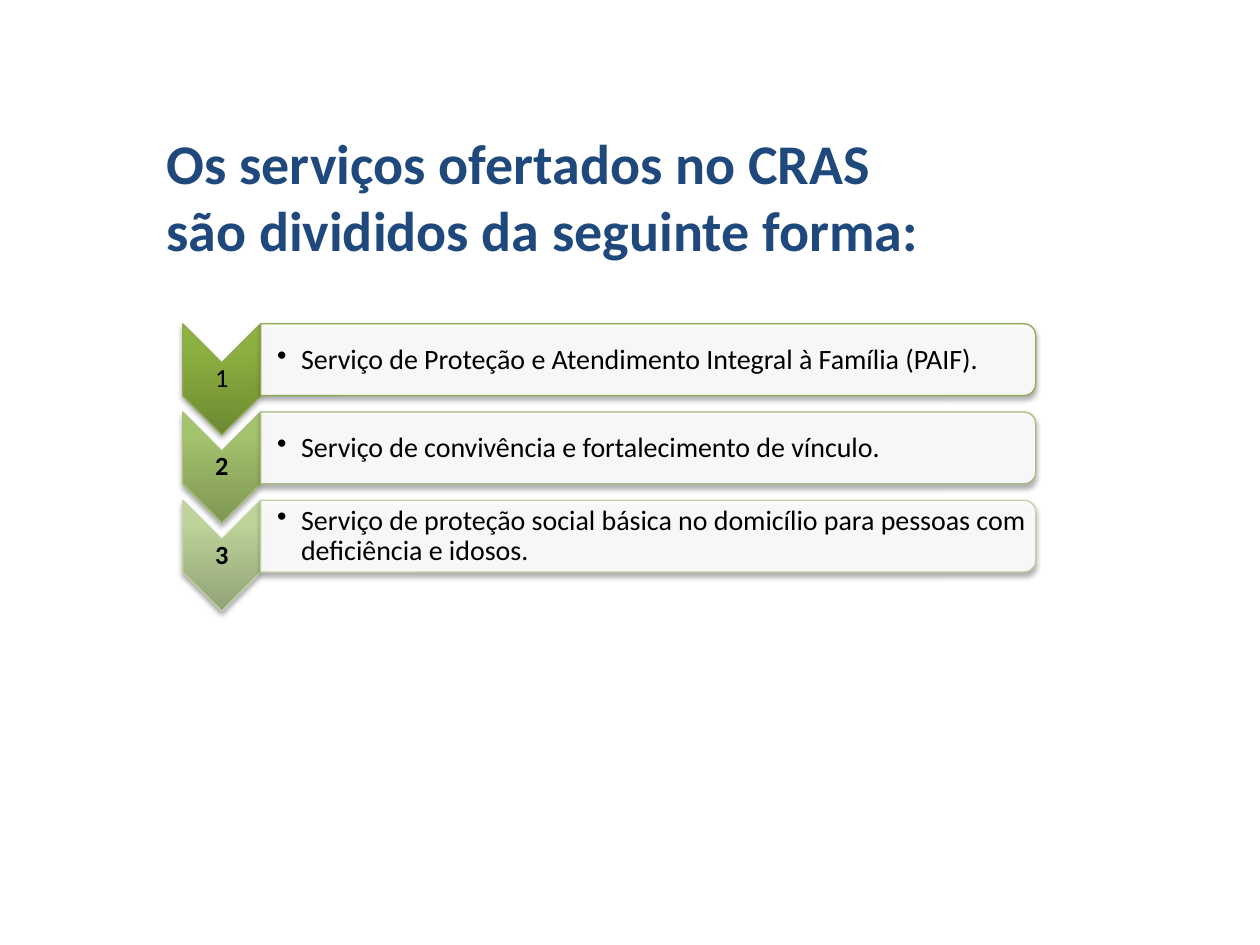
from lxml import etree
from pptx import Presentation
from pptx import util as u
from pptx.dml.color import RGBColor
from pptx.enum import shapes, text
from pptx.oxml import parse_xml
from pptx.oxml.ns import nsdecls, qn

HEADING = ["Os serviços ofertados no CRAS", "são divididos da seguinte forma:"]
SERVICES = [
    dict(number="1", bold=False, line=RGBColor(0x8D, 0xAA, 0x51),
         shades=("6C8932", "8DB141", "8EB43F"),
         label="Serviço de Proteção e Atendimento Integral à Família (PAIF)."),
    dict(number="2", bold=True, line=RGBColor(0xA6, 0xBF, 0x7A),
         shades=("7E9654", "A4C36D", "A5C56B"),
         label="Serviço de convivência e fortalecimento de vínculo."),
    dict(number="3", bold=True, line=RGBColor(0xC1, 0xD3, 0xA5),
         shades=("91A276", "BDD399", "BED599"),
         label="Serviço de proteção social básica no domicílio para pessoas "
               "com deficiência e idosos."),
]
NAVY = RGBColor(0x1F, 0x49, 0x7D)
BLACK = RGBColor(0, 0, 0)
WHITE = RGBColor(255, 255, 255)

LEFT, TOP, PITCH = 1.45, 2.57, 0.7
ARROW_W, ARROW_H = 0.62, 0.88
PANEL_W, PANEL_H = 6.15, 0.57
MARGIN = 0.01
STOPS = (0, 80000, 100000)


def apply(target, values):
    for key, value in values.items():
        setattr(target, key, value)


def place(shape, left, top, width, height):
    apply(shape, dict(left=u.Inches(left), top=u.Inches(top),
                      width=u.Inches(width), height=u.Inches(height)))


def add_turned(slide, kind, left, top, width, height, line):
    shape = slide.shapes.add_shape(kind, 0, 0, 0, 0)
    place(shape, left + (width - height) / 2, top + (height - width) / 2, height, width)
    shape.rotation = 90
    shape.line.color.rgb = line
    shape.line.width = u.Pt(0.75)
    shape.shadow.inherit = False
    shape._element.spPr.find(qn("a:effectLst")).append(parse_xml(
        f'<a:outerShdw {nsdecls("a")} blurRad="40000" dist="23000" dir="5400000" '
        'rotWithShape="0"><a:srgbClr val="000000"><a:alpha val="35000"/>'
        '</a:srgbClr></a:outerShdw>'))
    return shape


def fill_gradient(shape, shades):
    stops = "".join(f'<a:gs pos="{pos}"><a:srgbClr val="{shade}"/></a:gs>'
                    for pos, shade in zip(STOPS, shades))
    shape._element.spPr.find(qn("a:prstGeom")).addnext(parse_xml(
        f'<a:gradFill {nsdecls("a")} rotWithShape="0"><a:gsLst>{stops}</a:gsLst>'
        '<a:lin ang="16200000" scaled="0"/></a:gradFill>'))


def add_label(slide, box, words, font, inset=MARGIN, align=None, bullet=False):
    frame = slide.shapes.add_textbox(*map(u.Inches, box)).text_frame
    apply(frame, dict(word_wrap=True, vertical_anchor=text.MSO_ANCHOR.MIDDLE,
                      margin_left=u.Inches(inset), margin_right=u.Inches(MARGIN),
                      margin_top=u.Inches(MARGIN), margin_bottom=u.Inches(MARGIN)))
    paragraph = frame.paragraphs[0]
    paragraph.text = words
    apply(paragraph, dict(alignment=align, line_spacing=0.9))
    if bullet:
        props = paragraph._p.get_or_add_pPr()
        indent = u.Inches(0.19)
        props.set("marL", str(indent))
        props.set("indent", str(-indent))
        etree.SubElement(props, qn("a:buChar")).set("char", "•")
    apply(paragraph.font, dict(name="Calibri", **font))
    paragraph.font.color.rgb = BLACK


def add_heading(slide):
    title = slide.shapes.title
    place(title, 1.22, 0.97, 6.22, 1.18)
    frame = title.text_frame
    frame.text = "\n".join(HEADING)
    apply(frame, dict(word_wrap=False, auto_size=text.MSO_AUTO_SIZE.NONE,
                      vertical_anchor=text.MSO_ANCHOR.TOP))
    for paragraph in frame.paragraphs:
        paragraph.alignment = text.PP_ALIGN.LEFT
        apply(paragraph.font, dict(name="Calibri", size=u.Pt(32), bold=True))
        paragraph.font.color.rgb = NAVY


def add_service(slide, row, service):
    top = TOP + row * PITCH
    panel_left = LEFT + ARROW_W
    arrow = add_turned(slide, shapes.MSO_SHAPE.CHEVRON, LEFT, top,
                       ARROW_W, ARROW_H, service["line"])
    fill_gradient(arrow, service["shades"])
    add_label(slide, (LEFT, top + ARROW_W / 2, ARROW_W, ARROW_H - ARROW_W),
              service["number"], dict(size=u.Pt(15), bold=service["bold"]),
              align=text.PP_ALIGN.CENTER)
    panel = add_turned(slide, shapes.MSO_SHAPE.ROUND_2_SAME_RECTANGLE, panel_left, top,
                       PANEL_W, PANEL_H, service["line"])
    panel.fill.solid()
    panel.fill.fore_color.rgb = WHITE
    white = panel._element.spPr.find(qn("a:solidFill"))[0]
    etree.SubElement(white, qn("a:alpha")).set("val", "90000")
    add_label(slide, (panel_left + MARGIN, top + 0.03, PANEL_W - 0.02, PANEL_H - 0.05),
              service["label"], dict(size=u.Pt(16)), inset=0.12, bullet=True)


def main():
    deck = Presentation()
    apply(deck, dict(slide_width=u.Inches(10), slide_height=u.Inches(7.5)))
    slide = deck.slides.add_slide(deck.slide_layouts[5])
    add_heading(slide)
    for row, service in enumerate(SERVICES):
        add_service(slide, row, service)
    deck.save("out.pptx")


if __name__ == "__main__":
    main()
